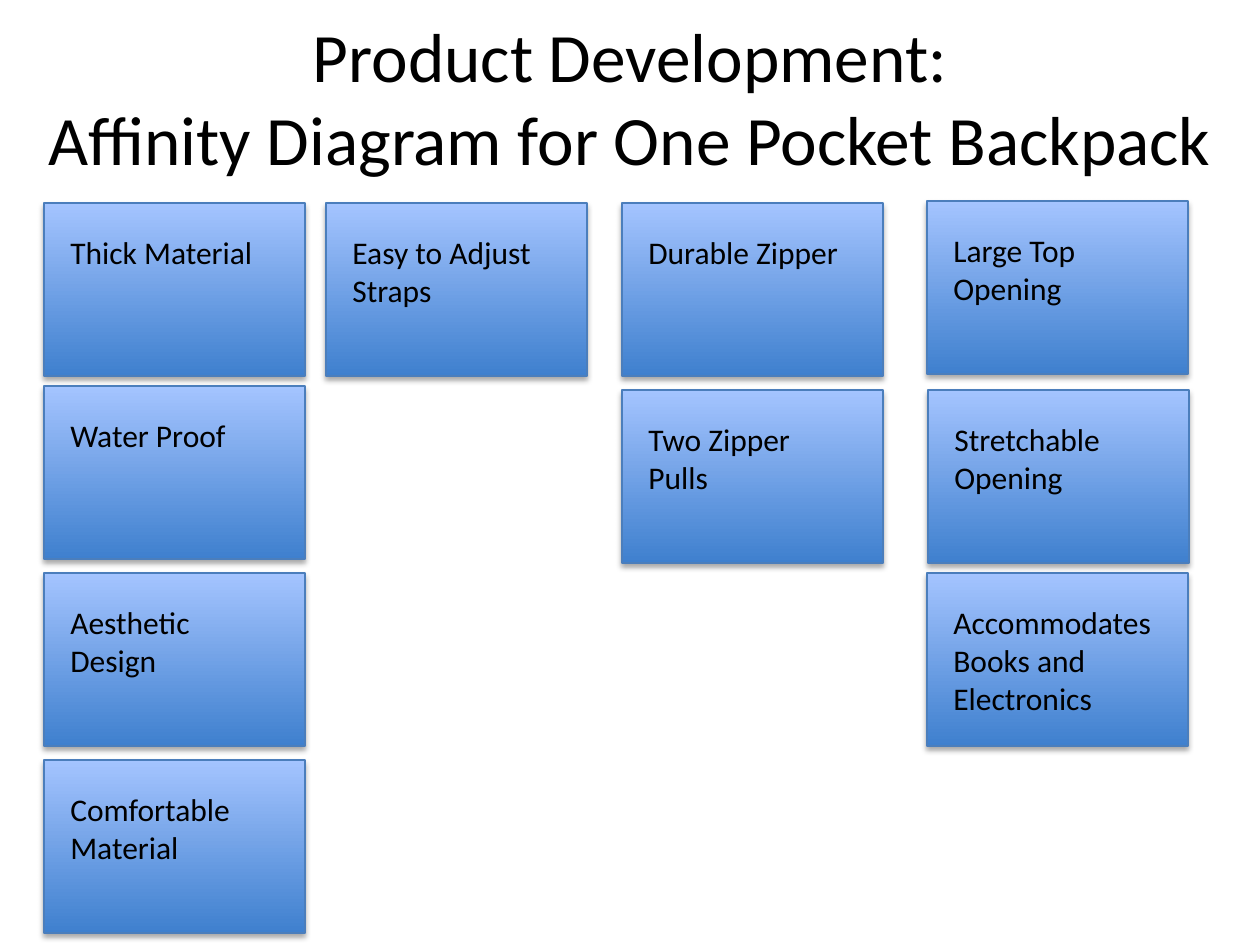
from dataclasses import dataclass

from lxml.etree import SubElement
from pptx import Presentation
from pptx.dml.color import RGBColor
from pptx.enum.shapes import MSO_SHAPE
from pptx.enum.text import MSO_ANCHOR, MSO_AUTO_SIZE, PP_ALIGN
from pptx.oxml.ns import qn
from pptx.shapes.autoshape import Shape
from pptx.slide import Slide
from pptx.text.text import _Paragraph as Para
from pptx.util import Emu, Pt

SCALE = 914400 / 126


@dataclass(frozen=True)
class Theme:
    font: str = "Calibri"
    ink: str = "000000"
    low: str = "3F80CE"
    high: str = "A4C4FF"
    edge: str = "4B7EBC"
    head: float = 39.6
    body: float = 18


@dataclass(frozen=True)
class Card:
    text: str
    left: int
    top: int
    lines: int


THEME = Theme()
CARD_W, CARD_H = 261, 173
PAD_X, PAD_Y = 14, 24
TEXT_W, LINE_H, INSET = 226, 38, 13
COLS = (44, 326, 622, 927)
ROWS = (203, 386, 573, 760)

CARDS = (
    Card("Thick Material", COLS[0], ROWS[0], 1),
    Card("Water Proof", COLS[0], ROWS[1], 1),
    Card("Easy to Adjust Straps", COLS[1], ROWS[0], 2),
    Card("Two Zipper Pulls", COLS[2], ROWS[1] + 4, 2),
    Card("Accommodates Books and Electronics", COLS[3], ROWS[2], 3),
    Card("Durable Zipper", COLS[2], ROWS[0], 1),
    Card("Stretchable Opening", COLS[3] + 1, ROWS[1] + 4, 2),
    Card("Large Top Opening", COLS[3], ROWS[0] - 2, 2),
    Card("Aesthetic Design", COLS[0], ROWS[2], 2),
    Card("Comfortable Material", COLS[0], ROWS[3], 2),
)


def px(size: int) -> Emu:
    return Emu(round(size * SCALE))


def box(*sizes: int) -> list[Emu]:
    return [px(size) for size in sizes]


def add_run(para: Para, text: str, size: float) -> None:
    run = para.add_run()
    run.text = text
    run.font.name = THEME.font
    run.font.size = Pt(size)
    run.font.color.rgb = RGBColor.from_string(THEME.ink)


def add_shade(shape: Shape) -> None:
    """Give the shape a soft shadow straight below it."""
    shape.shadow.inherit = False
    effects = shape._element.spPr.find(qn("a:effectLst"))
    outer = SubElement(effects, qn("a:outerShdw"), blurRad=str(Pt(3.1)),
                       dist=str(Pt(1.8)), dir="5400000", rotWithShape="0")
    color = SubElement(outer, qn("a:srgbClr"), val=THEME.ink)
    SubElement(color, qn("a:alpha"), val="35000")


def paint(shape: Shape) -> None:
    shape.fill.gradient()
    shape.fill.gradient_angle = 90
    for stop, color in zip(shape.fill.gradient_stops, (THEME.low, THEME.high)):
        stop.color.rgb = RGBColor.from_string(color)
    shape.line.color.rgb = RGBColor.from_string(THEME.edge)
    shape.line.width = Pt(0.75)
    add_shade(shape)


def draw_card(slide: Slide, card: Card) -> None:
    group = slide.shapes.add_group_shape()
    paint(group.shapes.add_shape(
        MSO_SHAPE.RECTANGLE, *box(card.left, card.top, CARD_W, CARD_H)))
    label = group.shapes.add_textbox(*box(
        card.left + PAD_X, card.top + PAD_Y,
        TEXT_W, INSET + card.lines * LINE_H))
    frame = label.text_frame
    frame.word_wrap = True
    frame.auto_size = MSO_AUTO_SIZE.SHAPE_TO_FIT_TEXT
    add_run(frame.paragraphs[0], card.text, THEME.body)


def draw_title(slide: Slide) -> None:
    frame = slide.shapes.add_textbox(*box(0, 18, 1260, 157)).text_frame
    frame.word_wrap = True
    frame.vertical_anchor = MSO_ANCHOR.MIDDLE
    para = frame.paragraphs[0]
    para.alignment = PP_ALIGN.CENTER
    add_run(para, "Product Development:", THEME.head)
    para.add_line_break()
    add_run(para, "Affinity Diagram for One Pocket Backpack", THEME.head)


def main() -> None:
    deck = Presentation()
    deck.slide_width, deck.slide_height = box(1260, 945)
    slide = deck.slides.add_slide(deck.slide_layouts[6])
    draw_title(slide)
    for card in CARDS:
        draw_card(slide, card)
    deck.save("out.pptx")


if __name__ == "__main__":
    main()
